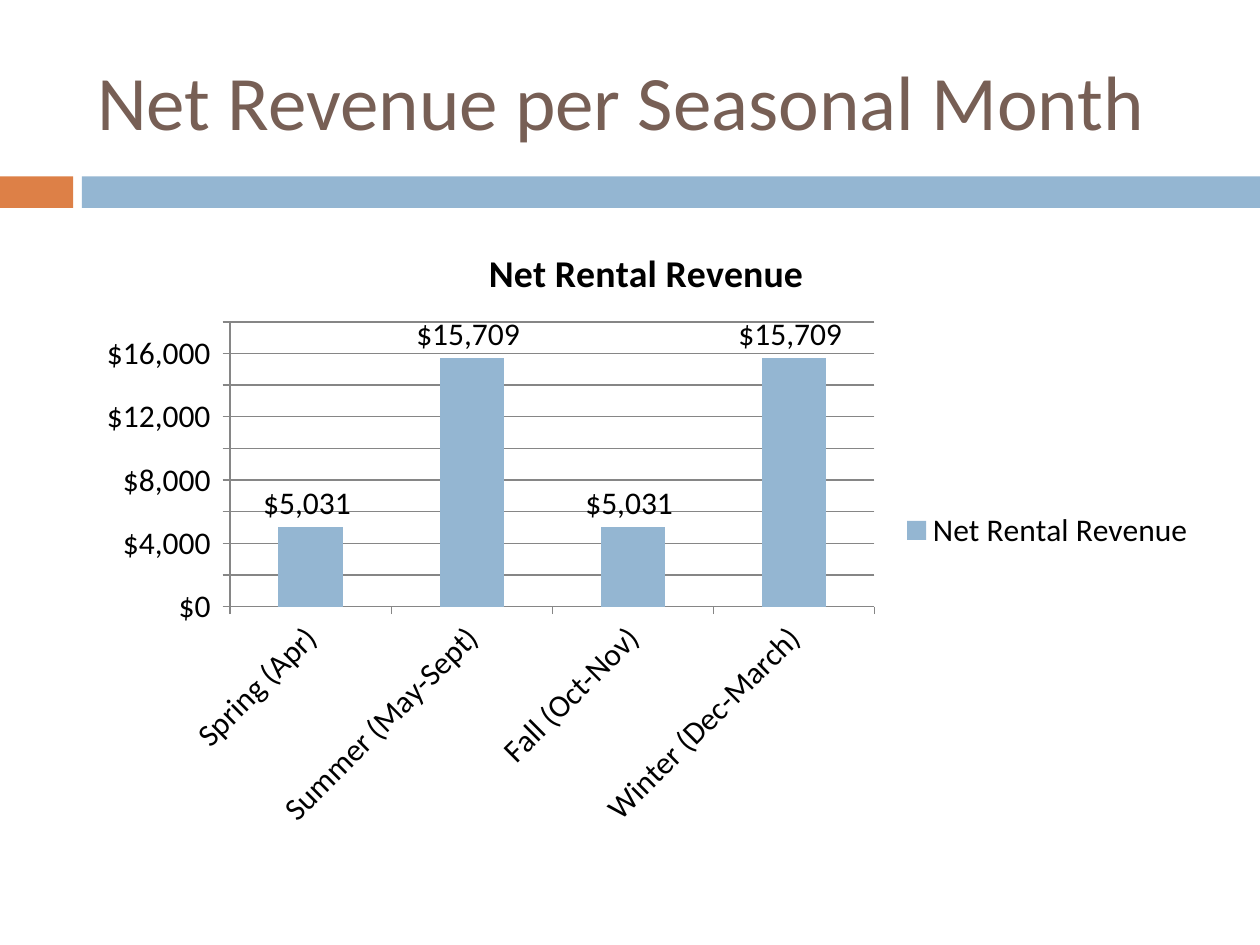
from dataclasses import dataclass

from pptx import Presentation
from pptx import util as u
from pptx.chart.data import CategoryChartData
from pptx.dml.color import RGBColor
from pptx.enum import chart as charts, shapes, text

COLORS = {
    "title": "775F55",
    "accent": "DD8047",
    "blue": "94B6D2",
    "axis": "868686",
    "ink": "000000",
}
FONT = "Calibri"
DOLLARS = '"$"#,##0_);[Red]\\("$"#,##0\\)'
LEFT, WIDTH = u.Inches(0.67), u.Inches(8.92)


@dataclass
class Band:
    left: float
    width: float
    color: str


BANDS = [Band(0, 0.58, "accent"), Band(0.65, 9.35, "blue")]
REVENUE = {
    "Spring (Apr)": 5031,
    "Summer (May-Sept)": 15709,
    "Fall (Oct-Nov)": 5031,
    "Winter (Dec-March)": 15709,
}


def rgb(name: str) -> RGBColor:
    return RGBColor.from_string(COLORS[name])


def set_font(font, size: float, color: str, bold: bool = False) -> None:
    font.name, font.size, font.bold = FONT, u.Pt(size), bold
    font.color.rgb = rgb(color)


def draw_band(page, band: Band) -> None:
    box = page.shapes.add_shape(
        shapes.MSO_SHAPE.RECTANGLE, u.Inches(band.left), u.Inches(1.4),
        u.Inches(band.width), u.Inches(0.25))
    box.shadow.inherit = False
    box.fill.solid()
    box.fill.fore_color.rgb = rgb(band.color)
    box.line.fill.background()


def draw_title(page, wording: str) -> None:
    title = page.shapes.title
    title.left, title.top = LEFT, u.Inches(0.25)
    title.width, title.height = WIDTH, u.Inches(1.08)
    frame = title.text_frame
    frame.text = wording
    frame.vertical_anchor = text.MSO_ANCHOR.MIDDLE
    para = frame.paragraphs[0]
    para.alignment = text.PP_ALIGN.LEFT
    set_font(para.font, 44, "title")


def draw_chart(page, name: str, values: dict[str, int]) -> None:
    data = CategoryChartData(number_format=DOLLARS)
    data.categories = list(values)
    data.add_series(name, list(values.values()))
    chart = page.shapes.add_chart(
        charts.XL_CHART_TYPE.COLUMN_CLUSTERED, LEFT, u.Inches(1.75),
        WIDTH, u.Inches(4.92), data).chart
    set_font(chart.font, 18, "ink")

    # Title and legend
    chart.has_title = True
    chart.chart_title.text_frame.text = name
    set_font(chart.chart_title.text_frame.paragraphs[0].font, 21.6, "ink", bold=True)
    chart.has_legend = True
    chart.legend.position = charts.XL_LEGEND_POSITION.RIGHT
    chart.legend.include_in_layout = False

    # Columns and their labels
    plot = chart.plots[0]
    plot.gap_width = 150
    plot.vary_by_categories = False
    fill = plot.series[0].format.fill
    fill.solid()
    fill.fore_color.rgb = rgb("blue")
    plot.has_data_labels = True
    labels = plot.data_labels
    labels.show_value = True
    labels.number_format, labels.number_format_is_linked = DOLLARS, False
    labels.position = charts.XL_LABEL_POSITION.OUTSIDE_END

    # Axes
    amounts, seasons = chart.value_axis, chart.category_axis
    amounts.minimum_scale, amounts.maximum_scale = 0, 18000
    amounts.major_unit = 2000
    amounts.has_major_gridlines = True
    amounts.tick_labels.number_format = DOLLARS
    amounts.tick_labels.number_format_is_linked = False
    for axis in (amounts, seasons):
        axis.major_tick_mark = charts.XL_TICK_MARK.OUTSIDE
        set_font(axis.tick_labels.font, 18, "ink")
    for part in (amounts, seasons, amounts.major_gridlines):
        part.format.line.color.rgb = rgb("axis")
        part.format.line.width = u.Pt(0.75)

    # Season names slant upwards at 45 degrees
    seasons._element.txPr.bodyPr.set("rot", str(-45 * 60000))


def main() -> None:
    deck = Presentation()
    deck.slide_width, deck.slide_height = u.Inches(10), u.Inches(7.5)
    page = deck.slides.add_slide(deck.slide_layouts[5])
    for band in BANDS:
        draw_band(page, band)
    draw_title(page, "Net Revenue per Seasonal Month")
    draw_chart(page, "Net Rental Revenue", REVENUE)
    deck.save("out.pptx")


if __name__ == "__main__":
    main()
